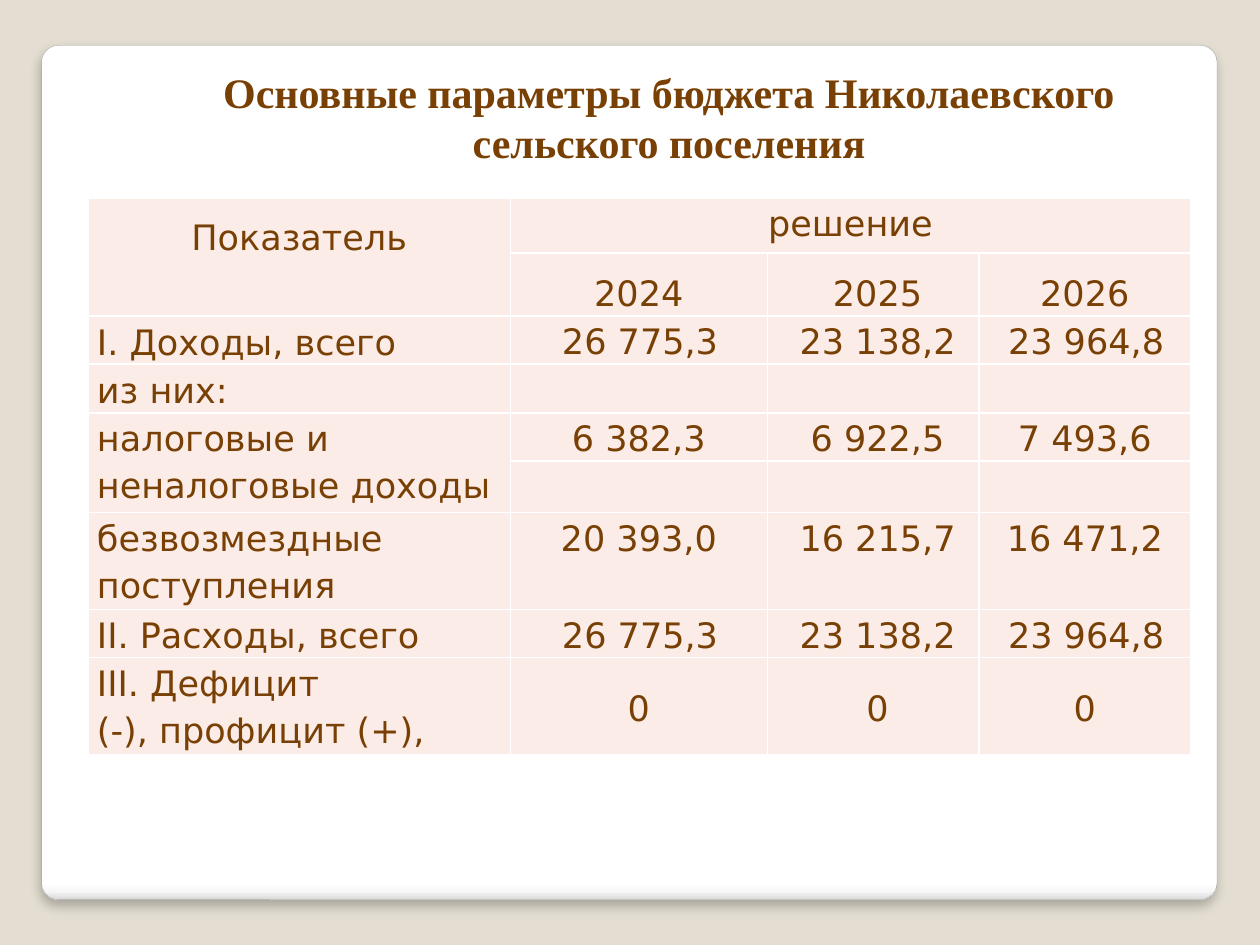
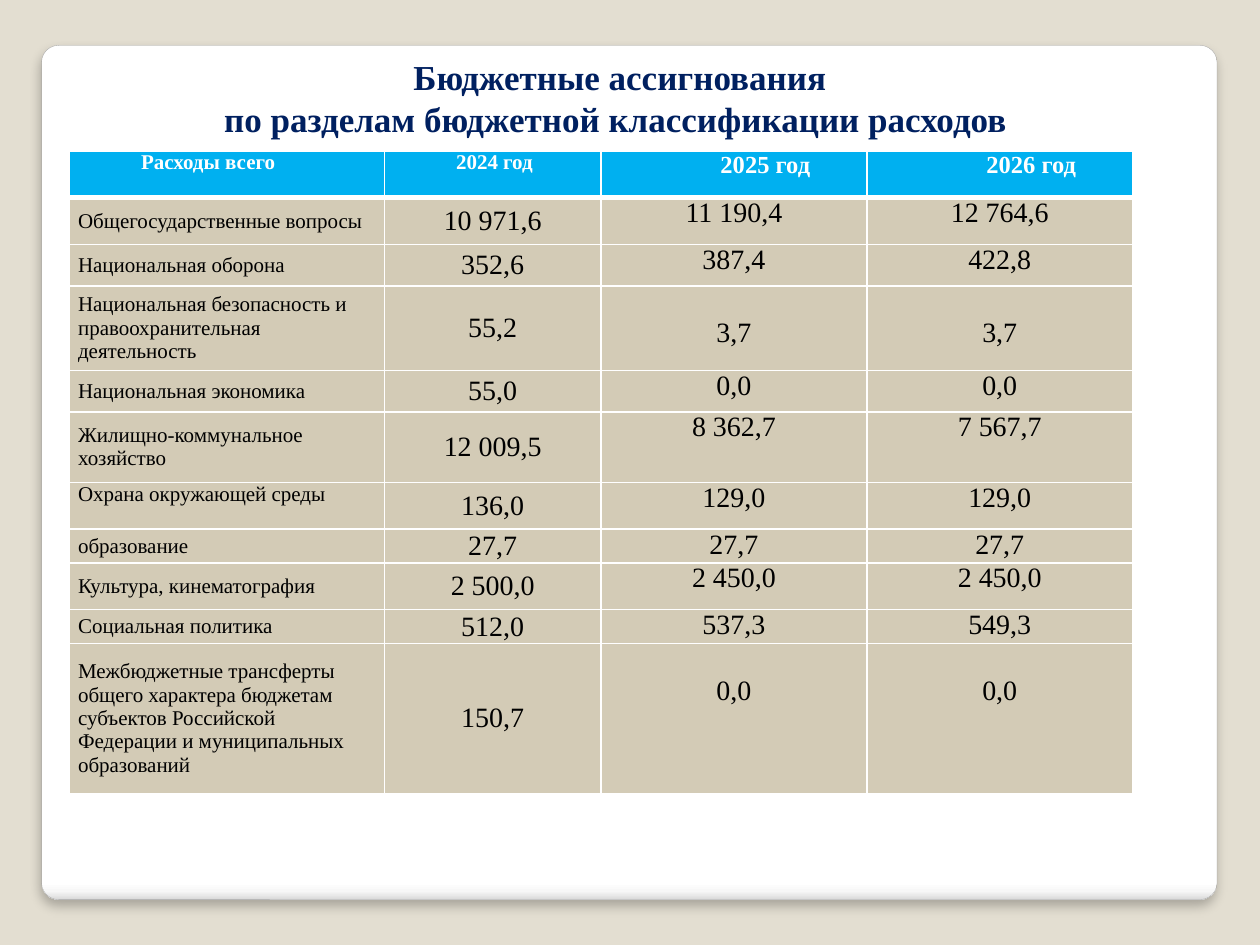
from lxml import etree
from pptx import Presentation
from pptx.dml.color import RGBColor
from pptx.enum.shapes import MSO_SHAPE
from pptx.enum.text import MSO_ANCHOR, MSO_AUTO_SIZE, PP_ALIGN
from pptx.oxml import parse_xml
from pptx.oxml.ns import qn
from pptx.util import Inches, Pt

LEFT, CENTER = PP_ALIGN.LEFT, PP_ALIGN.CENTER
TOP, MIDDLE = MSO_ANCHOR.TOP, MSO_ANCHOR.MIDDLE
ROUNDED = MSO_SHAPE.ROUNDED_RECTANGLE
NO_AUTOSIZE = MSO_AUTO_SIZE.NONE

SERIF, SANS = "Times New Roman", "DejaVu Sans"
DRAWING = 'xmlns:a="http://schemas.openxmlformats.org/drawingml/2006/main"'
COLORS = {
    "background": "E3DED1", "panel_line": "A4A4A4", "brown": "784004",
    "navy": "002060", "rose": "FCECE7", "blue": "00B0F0", "sand": "D3CBB6",
    "white": "FFFFFF", "black": "000000",
}
PANEL_STOPS = [(0, "FFFFFF"), (98, "FFFFFF"), (99, "F7F7F7"), (100, "DADADA")]


def color(name):
    return RGBColor.from_string(COLORS[name])


class BudgetDeck:
    def __init__(self):
        self.deck = Presentation()
        self.deck.slide_width, self.deck.slide_height = Inches(10), Inches(7.5)
        backdrop = self.deck.slide_master.background.fill
        backdrop.solid()
        backdrop.fore_color.rgb = color("background")
        self.page = None
        self.grid = None

    def new_page(self, title, place, size, ink):
        self.page = self.deck.slides.add_slide(self.deck.slide_layouts[5])
        box = self.page.shapes.title
        box.left, box.top, box.width, box.height = map(Inches, place)
        frame = box.text_frame
        frame.text = title
        frame.word_wrap = True
        frame.auto_size = NO_AUTOSIZE
        frame.vertical_anchor = MIDDLE
        self.style(frame.paragraphs[0], SERIF, size, ink, True, CENTER)
        box.element.addprevious(self.panel().element)

    def panel(self):
        panel = self.page.shapes.add_shape(
            ROUNDED, Inches(0.33), Inches(0.36), Inches(9.33), Inches(6.78))
        panel.adjustments[0] = 0.02
        panel.line.color.rgb = color("panel_line")
        panel.line.width = Pt(0.16)
        stops = "".join(
            f'<a:gs pos="{place * 1000}"><a:srgbClr val="{shade}"/></a:gs>'
            for place, shade in PANEL_STOPS)
        properties = panel.element.spPr
        properties.find(qn("a:prstGeom")).addnext(parse_xml(
            f'<a:gradFill {DRAWING}><a:gsLst>{stops}</a:gsLst>'
            '<a:lin ang="5400000" scaled="0"/></a:gradFill>'))
        properties.append(parse_xml(
            f'<a:effectLst {DRAWING}><a:outerShdw blurRad="{Pt(6)}" dist="{Pt(4)}" '
            'dir="5400000" algn="t" rotWithShape="0"><a:srgbClr val="000000">'
            '<a:alpha val="25000"/></a:srgbClr></a:outerShdw></a:effectLst>'))
        return panel

    def style(self, para, font, size, ink, bold, align):
        para.alignment = align
        para.font.name, para.font.size, para.font.bold = font, Pt(size), bold
        para.font.color.rgb = color(ink)

    def table(self, left, top, widths, heights):
        frame = self.page.shapes.add_table(
            len(heights), len(widths), Inches(left), Inches(top),
            Inches(sum(widths)), Inches(sum(heights)))
        self.grid = frame.table
        self.grid.first_row = self.grid.horz_banding = False
        for column, width in zip(self.grid.columns, widths):
            column.width = Inches(width)
        for row, height in zip(self.grid.rows, heights):
            row.height = Inches(height)

    def cell(self, row, column, text, fill, font, size, ink, bold=False,
             align=CENTER, anchor=TOP, indent=0, spacing=1.0, drop=0, underline=1):
        cell = self.grid.cell(row, column)
        cell.text = text
        cell.margin_left = cell.margin_right = Inches(0.07)
        cell.margin_top, cell.margin_bottom = Inches(drop), 0
        cell.vertical_anchor = anchor
        for para in cell.text_frame.paragraphs:
            self.style(para, font, size, ink, bold, align)
            para.line_spacing = spacing
            if indent:
                properties = para._p.get_or_add_pPr()
                properties.set("marL", "0")
                properties.set("indent", str(Inches(indent)))
        cell.fill.solid()
        cell.fill.fore_color.rgb = color(fill)
        self.borders(cell, underline)

    def borders(self, cell, underline):
        properties = cell._tc.get_or_add_tcPr()
        for index, side in enumerate("LRTB"):
            width = Pt(underline if side == "B" else 1)
            line = etree.Element(qn(f"a:ln{side}"), w=str(width))
            paint = etree.SubElement(line, qn("a:solidFill"))
            etree.SubElement(paint, qn("a:srgbClr"), val=COLORS["white"])
            properties.insert(index, line)


def add_parameters(budget):
    budget.new_page("Основные параметры бюджета Николаевского сельского поселения",
                    (1.09, 0.47, 8.44, 0.91), 24, "brown")
    budget.table(0.7, 1.57, [3.35, 2.04, 1.68, 1.68],
                 [0.44, 0.5, 0.38, 0.39, 0.38, 0.41, 0.77, 0.38, 0.77])
    look = dict(fill="rose", font=SANS, size=20, ink="brown")
    blank = ["", "", ""]
    totals = ["26 775,3", "23 138,2", "23 964,8"]
    rows = [
        ("Показатель", ["решение", "", ""], 0, TOP),
        ("", ["2024", "2025", "2026"], 0, TOP),
        ("I. Доходы, всего", totals, 0.02, MIDDLE),
        ("из них:", blank, 0, MIDDLE),
        ("налоговые и неналоговые доходы", ["6 382,3", "6 922,5", "7 493,6"], -0.07, TOP),
        ("", blank, 0, TOP),
        ("безвозмездные поступления", ["20 393,0", "16 215,7", "16 471,2"], -0.07, TOP),
        ("II. Расходы, всего", totals, 0.02, MIDDLE),
        ("III. Дефицит\n(-), профицит (+),", ["0", "0", "0"], 0, TOP),
    ]
    last = len(rows) - 1
    for row, (label, values, indent, anchor) in enumerate(rows):
        header = row == 0
        budget.cell(row, 0, label, align=CENTER if header else LEFT, anchor=anchor,
                    indent=-0.07 if header else 0,
                    spacing=1.5 if header else 1.15, **look)
        for column, value in enumerate(values, 1):
            budget.cell(row, column, value, anchor=MIDDLE if row == last else TOP,
                        indent=0.07 if column == 2 and not header else indent,
                        spacing=1.5 if row == 1 else 1.15, **look)
    for first, final in [((0, 0), (1, 0)), ((0, 1), (0, 3)), ((4, 0), (5, 0))]:
        budget.grid.cell(*first).merge(budget.grid.cell(*final))


def add_appropriations(budget):
    budget.new_page("Бюджетные ассигнования\vпо разделам бюджетной классификации расходов ",
                    (0.78, 0.39, 8.28, 0.77), 20, "navy")
    budget.table(0.55, 1.2, [2.5, 1.72, 2.11, 2.11],
                 [0.37, 0.37, 0.33, 0.67, 0.33, 0.56, 0.37, 0.27, 0.37, 0.27, 1.19])
    headings = ["Расходы всего", "2024 год", "2025 год", "2026 год"]
    for column, heading in enumerate(headings):
        early = column < 2
        budget.cell(0, column, heading, "blue", SERIF, 12 if early else 14, "white",
                    bold=True, align=LEFT if early else CENTER, indent=0.5, underline=3)
    sections = [
        ("Общегосударственные вопросы", "10 971,6", "11 190,4", "12 764,6"),
        ("Национальная оборона", "352,6", "387,4", "422,8"),
        ("Национальная безопасность и правоохранительная деятельность",
         "55,2", "3,7", "3,7"),
        ("Национальная экономика", "55,0", "0,0", "0,0"),
        ("Жилищно-коммунальное хозяйство", "12 009,5", "8 362,7", "7 567,7"),
        ("Охрана окружающей среды", "136,0", "129,0", "129,0"),
        ("образование", "27,7", "27,7", "27,7"),
        ("Культура, кинематография", "2 500,0", "2 450,0", "2 450,0"),
        ("Социальная политика", "512,0", "537,3", "549,3"),
        ("Межбюджетные трансферты общего характера бюджетам субъектов "
         "Российской Федерации и муниципальных образований", "150,7", "0,0", "0,0"),
    ]
    top_label_row, lowered_rows = 6, (3, 10)
    look = dict(fill="sand", font=SERIF, ink="black")
    for row, (label, current, *planned) in enumerate(sections, 1):
        budget.cell(row, 0, label, size=12, align=LEFT,
                    anchor=TOP if row == top_label_row else MIDDLE, **look)
        budget.cell(row, 1, current, size=16, anchor=MIDDLE, **look)
        for column, value in enumerate(planned, 2):
            budget.cell(row, column, value, size=16,
                        drop=0.25 if row in lowered_rows else 0, **look)


def main():
    budget = BudgetDeck()
    add_parameters(budget)
    add_appropriations(budget)
    budget.deck.save("out.pptx")


if __name__ == "__main__":
    main()
